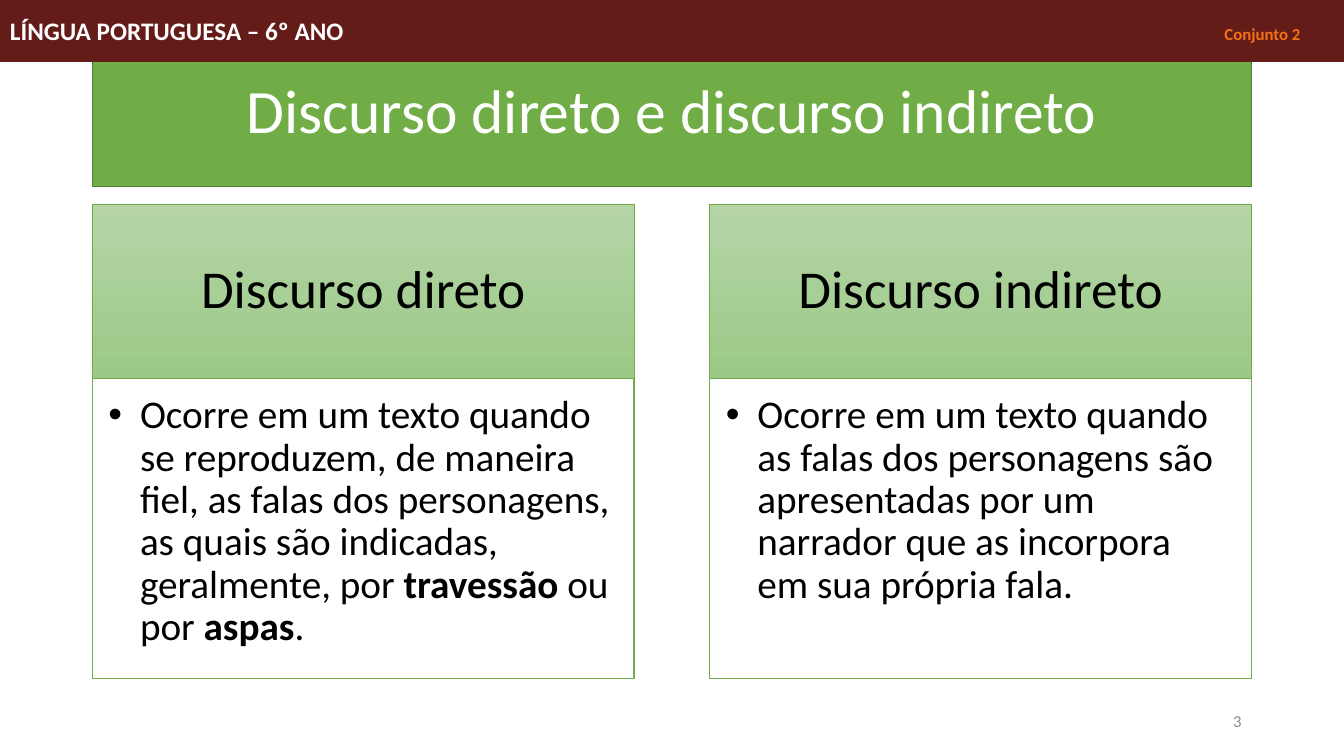
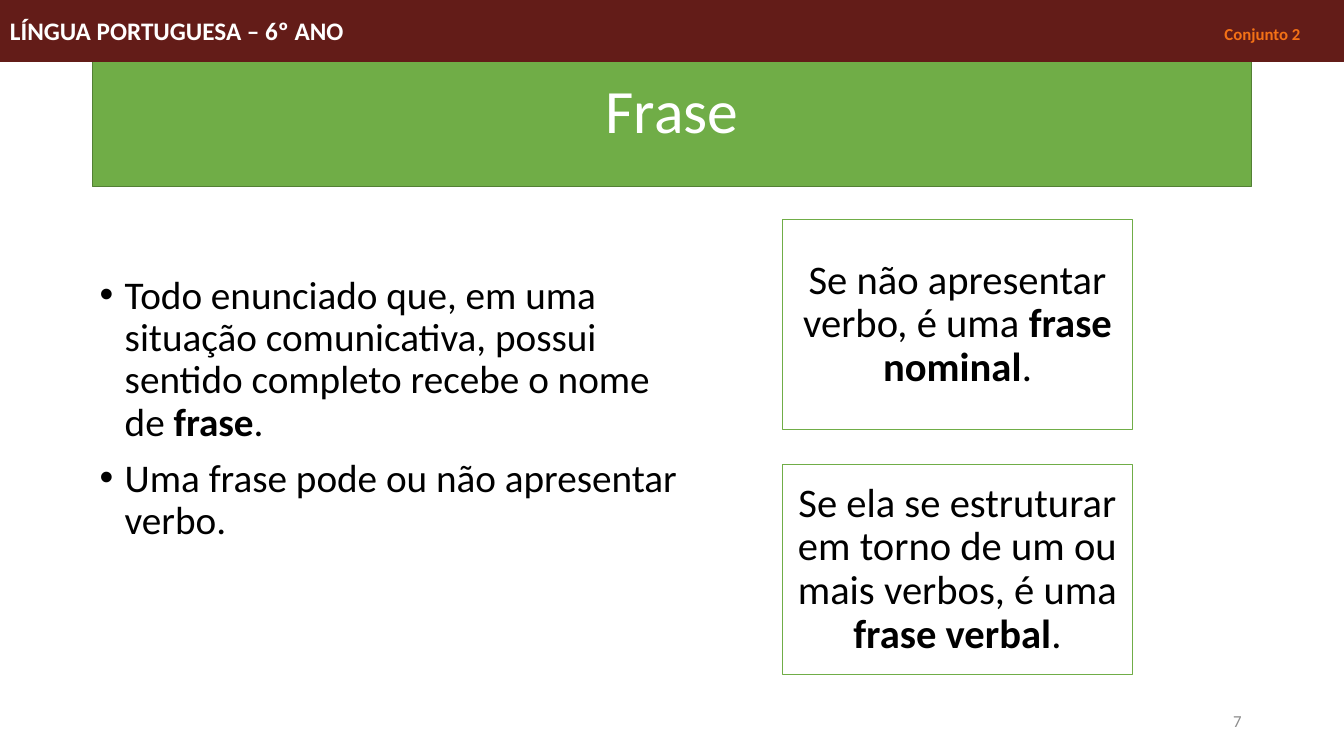
"""Build two Portuguese grammar slides with a shared band, title and page number."""
from dataclasses import dataclass

from lxml.etree import SubElement
from pptx import Presentation
from pptx.dml.color import RGBColor
from pptx.enum.shapes import MSO_SHAPE
from pptx.enum.text import MSO_ANCHOR, PP_ALIGN
from pptx.oxml.ns import qn
from pptx.util import Pt


@dataclass(frozen=True)
class Theme:
    font: str = "Calibri"
    band: str = "631C18"
    accent: str = "F47116"
    green: str = "70AD47"
    dark_green: str = "538035"
    light_top: str = "B5D5A7"
    light_bottom: str = "9CC987"
    white: str = "FFFFFF"
    black: str = "000000"
    grey: str = "8C8C8C"
    title_size: int = 44
    heading_size: int = 38
    box_size: int = 29
    body_size: int = 28
    band_size: int = 18
    small_size: int = 12


theme = Theme()


def write(box, *texts, size, color=theme.black, bold=False, align=PP_ALIGN.LEFT,
          anchor=MSO_ANCHOR.MIDDLE, insets=(7.2, 3.6, 7.2, 3.6), spacing=0.9,
          before=0, hanging=0):
    """Write one paragraph per text; **marks** turn bold, hanging adds bullets."""
    frame = box.text_frame
    frame.word_wrap = True
    frame.vertical_anchor = anchor
    frame.margin_left, frame.margin_top, frame.margin_right, frame.margin_bottom = map(Pt, insets)
    for index, text in enumerate(texts):
        para = frame.add_paragraph() if index else frame.paragraphs[0]
        para.alignment = align
        para.line_spacing = spacing
        para.space_before = Pt(before)
        if hanging:
            properties = para._p.get_or_add_pPr()
            properties.set("marL", str(Pt(hanging)))
            properties.set("indent", str(-Pt(hanging)))
            SubElement(properties, qn("a:buFont")).set("typeface", "Arial")
            SubElement(properties, qn("a:buChar")).set("char", "•")
        for part, words in enumerate(text.split("**")):
            if words:
                span = para.add_run()
                span.text = words
                span.font.name = theme.font
                span.font.size = Pt(size)
                span.font.bold = bold or part % 2 == 1
                span.font.color.rgb = RGBColor.from_string(color)


def add_panel(page, left, top, width, height, fill=theme.white, line=theme.green,
              line_width=1, fill_end=None):
    """Add a rectangle, with a vertical gradient when fill_end is given."""
    panel = page.shapes.add_shape(MSO_SHAPE.RECTANGLE, Pt(left), Pt(top), Pt(width), Pt(height))
    panel.shadow.inherit = False
    if fill_end:
        panel.fill.gradient()
        panel.fill.gradient_angle = 270
        for stop, color in zip(panel.fill.gradient_stops, (fill, fill_end)):
            stop.color.rgb = RGBColor.from_string(color)
    else:
        panel.fill.solid()
        panel.fill.fore_color.rgb = RGBColor.from_string(fill)
    panel.line.color.rgb = RGBColor.from_string(line)
    panel.line.width = Pt(line_width)
    return panel


deck = Presentation()
deck.slide_width, deck.slide_height = Pt(960), Pt(540)
margin, content_width = 66, 828

pages = []
for title, number in (("Discurso direto e discurso indireto", "3"), ("Frase", "7")):
    page = deck.slides.add_slide(deck.slide_layouts[6])
    pages.append(page)
    title_box = add_panel(page, margin, 29, content_width, 104.4, theme.green, theme.dark_green)
    write(title_box, title, size=theme.title_size, color=theme.white, align=PP_ALIGN.CENTER)
    band = add_panel(page, 0, 0, 960, 44, theme.band, theme.band, 0.75)
    write(band, "LÍNGUA PORTUGUESA – 6º ANO", size=theme.band_size, color=theme.white,
          bold=True, spacing=1)
    set_label = page.shapes.add_textbox(Pt(816), Pt(2.5), Pt(120), Pt(44))
    write(set_label, "Conjunto 2", size=theme.small_size, color=theme.accent, bold=True,
          align=PP_ALIGN.RIGHT, spacing=1)
    number_box = page.shapes.add_textbox(Pt(678), Pt(500.5), Pt(216), Pt(28.8))
    write(number_box, number, size=theme.small_size, color=theme.grey,
          align=PP_ALIGN.RIGHT, spacing=1)

speech_page, phrase_page = pages

columns = (
    ("Discurso direto",
     "Ocorre em um texto quando se reproduzem, de maneira fiel, as falas dos personagens, "
     "as quais são indicadas, geralmente, por **travessão** ou por **aspas**."),
    ("Discurso indireto",
     "Ocorre em um texto quando as falas dos personagens são apresentadas por um narrador "
     "que as incorpora em sua própria fala."),
)
column_width, heading_top, heading_height = 387, 145.7, 124.8
for index, (heading, definition) in enumerate(columns):
    left = margin + index * (content_width - column_width)
    heading_box = add_panel(speech_page, left, heading_top, column_width, heading_height,
                            theme.light_top, line_width=0.5, fill_end=theme.light_bottom)
    write(heading_box, heading, size=theme.heading_size, align=PP_ALIGN.CENTER)
    definition_box = add_panel(speech_page, left, heading_top + heading_height, column_width, 214)
    write(definition_box, definition, size=theme.body_size, anchor=MSO_ANCHOR.TOP,
          insets=(11.5, 11.5, 15.8, 17.3), hanging=22.5)

phrase_body = phrase_page.shapes.add_textbox(Pt(64), Pt(193), Pt(440.6), Pt(224.6))
write(phrase_body,
      "Todo enunciado que, em uma situação comunicativa, possui sentido completo recebe "
      "o nome de **frase**.",
      "Uma frase pode ou não apresentar verbo.",
      size=theme.body_size, anchor=MSO_ANCHOR.TOP, before=10, hanging=18)

phrase_kinds = (
    "Se não apresentar verbo, é uma **frase nominal**.",
    "Se ela se estruturar em torno de um ou mais verbos, é uma **frase verbal**.",
)
kind_height, kind_gap = 150, 25
for index, kind in enumerate(phrase_kinds):
    kind_box = add_panel(phrase_page, 559, 157 + index * (kind_height + kind_gap), 250, kind_height)
    write(kind_box, kind, size=theme.box_size, align=PP_ALIGN.CENTER, insets=(8.6,) * 4)

deck.save("out.pptx")
